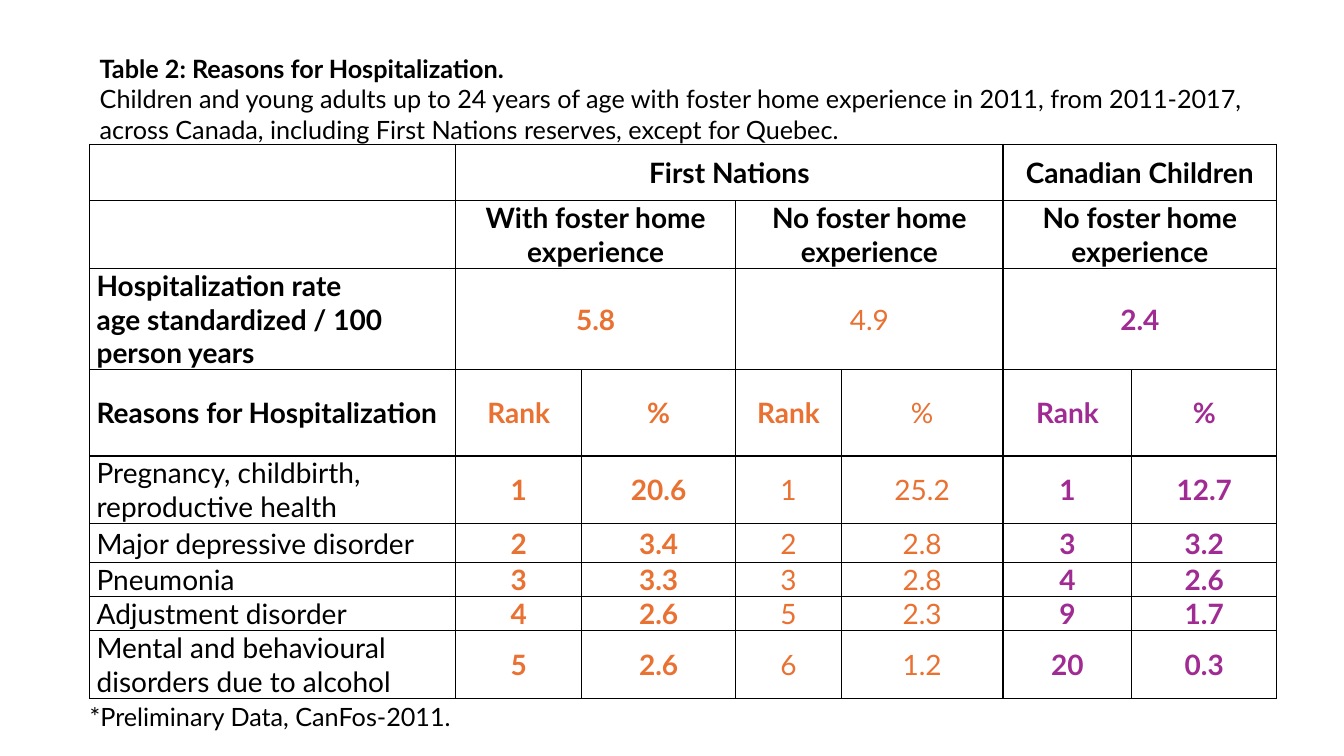
from lxml import etree
from pptx import Presentation
from pptx.dml.color import RGBColor
from pptx.enum import text as t
from pptx.oxml import ns
from pptx.util import Pt

BLACK, ORANGE, PURPLE, WHITE = "000000", "E97132", "A02B93", "FFFFFF"
FONT = "Lato"

# Content
CAPTION = [
    ("Table 2: Reasons for Hospitalization.", True),
    ("Children and young adults up to 24 years of age with foster home experience "
     "in 2011, from 2011-2017, across Canada, including First Nations reserves, "
     "except for Quebec.", False),
]
FOOTNOTE = [("*Preliminary Data, CanFos-2011.", False)]
ROWS = [
    ("", "First Nations", "", "", "", "Canadian Children", ""),
    ("", "With foster home experience", "", "No foster home experience", "",
     "No foster home experience", ""),
    ("Hospitalization rate\nage standardized / 100 person years",
     "5.8", "", "4.9", "", "2.4", ""),
    ("Reasons for Hospitalization", "Rank", "%", "Rank", "%", "Rank", "%"),
    ("Pregnancy, childbirth, reproductive health",
     "1", "20.6", "1", "25.2", "1", "12.7"),
    ("Major depressive disorder", "2", "3.4", "2", "2.8", "3", "3.2"),
    ("Pneumonia", "3", "3.3", "3", "2.8", "4", "2.6"),
    ("Adjustment disorder", "4", "2.6", "5", "2.3", "9", "1.7"),
    ("Mental and behavioural disorders due to alcohol",
     "5", "2.6", "6", "1.2", "20", "0.3"),
]
# row -> (first column, last column) of each merged cell
SPANS = {0: [(1, 4), (5, 6)],
         1: [(1, 2), (3, 4), (5, 6)],
         2: [(1, 2), (3, 4), (5, 6)]}
HEADER_ROWS, REASONS_ROW = 2, 3
NO_FOSTER, CANADIAN = (3, 4), (5, 6)

# Layout in points
LEFT, TABLE_TOP = 64, 103
COLUMN_WIDTHS = [261.5, 90, 110, 75.5, 115.5, 92, 103.5]
ROW_HEIGHTS = [40.5, 48.2, 72.2, 61.6, 48.2, 28, 24.2, 24.2, 48.2]
CELL_FORMAT = {"margin_left": Pt(5), "margin_right": Pt(5), "margin_top": 0,
               "margin_bottom": 0, "vertical_anchor": t.MSO_ANCHOR.MIDDLE}
FRAME_FORMAT = {"word_wrap": True, "auto_size": t.MSO_AUTO_SIZE.NONE,
                "vertical_anchor": t.MSO_ANCHOR.TOP,
                "margin_left": Pt(7.2), "margin_right": Pt(7.2),
                "margin_top": Pt(3.6), "margin_bottom": Pt(3.6)}


def rgb(hex_colour):
    return RGBColor.from_string(hex_colour)


def apply(target, values):
    for name, value in values.items():
        setattr(target, name, value)


def style(paragraph, size, colour, bold, align):
    paragraph.alignment = align
    for run in paragraph.runs:
        apply(run.font, {"name": FONT, "size": Pt(size), "bold": bold})
        run.font.color.rgb = rgb(colour)


def place_text(box, lines, left, top, width, height):
    apply(box, {"left": Pt(left), "top": Pt(top),
                "width": Pt(width), "height": Pt(height)})
    apply(box.text_frame, FRAME_FORMAT)
    box.text_frame.text = "\n".join(line for line, _ in lines)
    for paragraph, (_, bold) in zip(box.text_frame.paragraphs, lines):
        style(paragraph, 18, BLACK, bold, t.PP_ALIGN.LEFT)


def draw_borders(cell):
    properties = cell._tc.get_or_add_tcPr()
    for side in ("lnL", "lnR", "lnT", "lnB"):
        line = etree.SubElement(properties, ns.qn("a:" + side), w=str(Pt(1)))
        solid = etree.SubElement(line, ns.qn("a:solidFill"))
        etree.SubElement(solid, ns.qn("a:srgbClr"), val=BLACK)


def cell_look(row, column):
    """Colour and weight that follow from the row and the column group."""
    if column == 0:
        return BLACK, row <= REASONS_ROW
    if row < HEADER_ROWS:
        return BLACK, True
    if column in CANADIAN:
        return PURPLE, True
    rank_heading = row == REASONS_ROW and ROWS[row][column] == "Rank"
    return ORANGE, column not in NO_FOSTER or rank_heading


deck = Presentation()
apply(deck, {"slide_width": Pt(960), "slide_height": Pt(540)})
slide = deck.slides.add_slide(deck.slide_layouts[5])

# Table grid
table_width = sum(COLUMN_WIDTHS)
reasons = slide.shapes.add_table(
    len(ROWS), len(COLUMN_WIDTHS), Pt(LEFT), Pt(TABLE_TOP),
    Pt(table_width), Pt(sum(ROW_HEIGHTS))).table
apply(reasons, {"first_row": False, "horz_banding": False})
for column, width in zip(reasons.columns, COLUMN_WIDTHS):
    column.width = Pt(width)
for row, height in zip(reasons.rows, ROW_HEIGHTS):
    row.height = Pt(height)

# Table cells
for r, values in enumerate(ROWS):
    for c, value in enumerate(values):
        cell = reasons.cell(r, c)
        apply(cell, CELL_FORMAT)
        draw_borders(cell)
        if c in CANADIAN:
            cell.fill.solid()
            cell.fill.fore_color.rgb = rgb(WHITE)
        else:
            cell.fill.background()
        if value:
            cell.text = value
            align = t.PP_ALIGN.CENTER if c else t.PP_ALIGN.LEFT
            for paragraph in cell.text_frame.paragraphs:
                style(paragraph, 20, *cell_look(r, c), align)
    for first, last in SPANS.get(r, []):
        reasons.cell(r, first).merge(reasons.cell(r, last))

# Footnote and caption
place_text(slide.shapes.add_textbox(0, 0, 0, 0), FOOTNOTE, 57, 497.5, 524, 29)
place_text(slide.shapes.title, CAPTION, LEFT, 34.5, table_width, 73)

deck.save("out.pptx")
